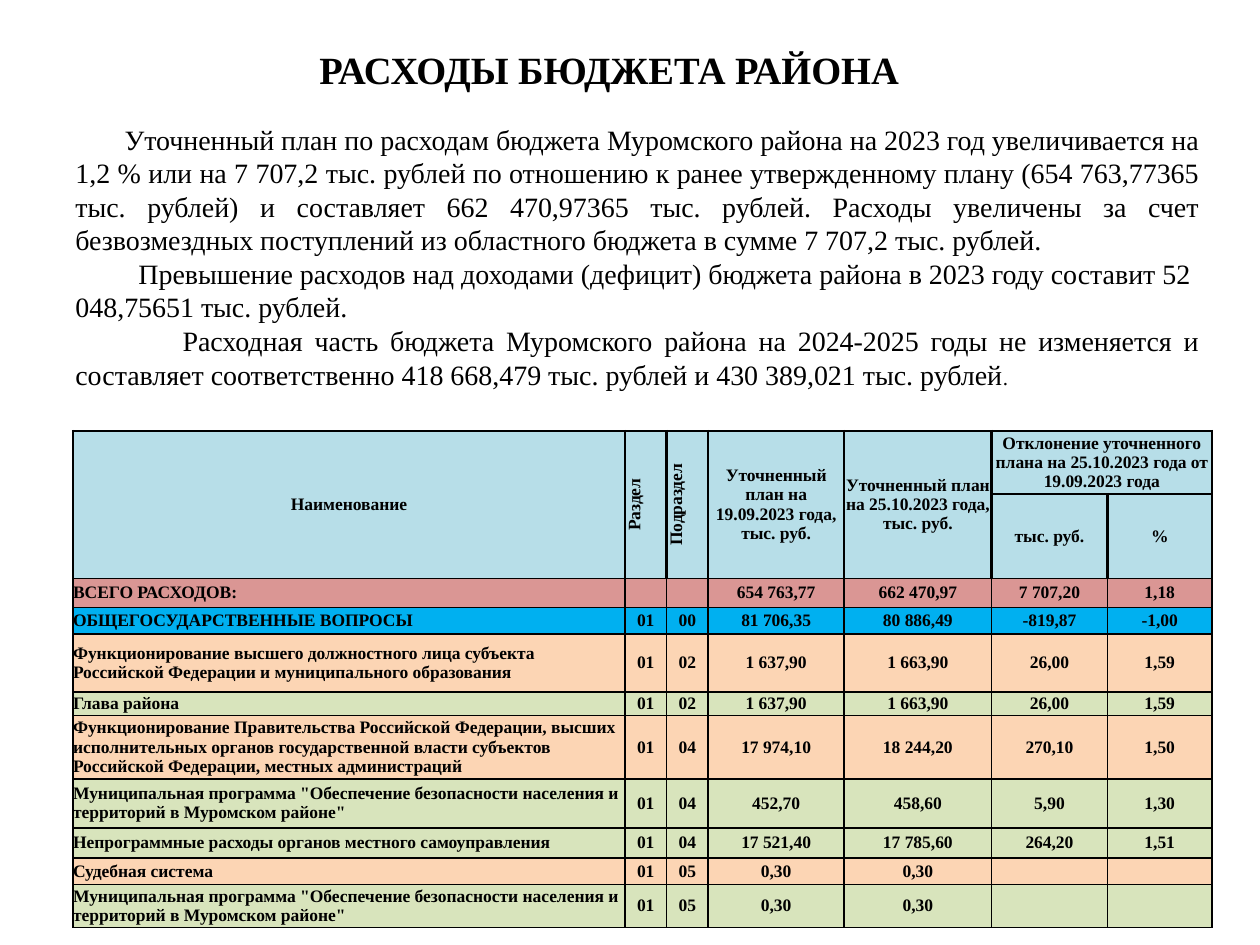
"""Build the slide on the expenditure of the district budget."""
from lxml import etree
from pptx import Presentation
from pptx.dml.color import RGBColor
from pptx.enum import text as t
from pptx.oxml import ns
from pptx.util import Inches, Pt

FONT = "Times New Roman"
BLACK = RGBColor(0, 0, 0)
HEAD = RGBColor(0xB7, 0xDE, 0xE8)
TOTAL = RGBColor(0xDA, 0x96, 0x94)
SECTION = RGBColor(0x00, 0xB0, 0xF0)
SUBSECTION = RGBColor(0xFC, 0xD5, 0xB4)
ITEM = RGBColor(0xD8, 0xE4, 0xBC)
LEFT, CENTER, JUSTIFY = t.PP_ALIGN.LEFT, t.PP_ALIGN.CENTER, t.PP_ALIGN.JUSTIFY

TITLE = "РАСХОДЫ БЮДЖЕТА РАЙОНА"
BODY = [
    (JUSTIFY, 0.39, [("Уточненный план по расходам бюджета Муромского района на 2023 год "
     "увеличивается на 1,2 % или на 7 707,2 тыс. рублей по отношению к ранее "
     "утвержденному плану (654 763,77365 тыс. рублей) и составляет "
     "662 470,97365 тыс. рублей. Расходы увеличены за счет безвозмездных "
     "поступлений из областного бюджета в сумме 7 707,2 тыс. рублей.", 16)]),
    (LEFT, 0.5, [("Превышение расходов над доходами (дефицит) бюджета района в 2023 году "
     "составит 52 048,75651 тыс. рублей.", 16)]),
    (JUSTIFY, 0.85, [("Расходная часть бюджета Муромского района на 2024-2025 годы не "
     "изменяется и составляет соответственно 418 668,479 тыс. рублей и "
     "430 389,021 тыс. рублей", 16), (".", 12)]),
]
PROGRAM = ('Муниципальная программа "Обеспечение безопасности населения '
           'и территорий в Муромском районе"')
ROWS = [
    (HEAD, 0.5, ["Наименование", "Раздел", "Подраздел",
     "Уточненный план на 19.09.2023 года, тыс. руб.",
     "Уточненный план на 25.10.2023 года, тыс. руб.",
     "Отклонение уточненного плана на 25.10.2023 года от 19.09.2023 года", ""]),
    (HEAD, 0.67, ["", "", "", "", "", "тыс. руб.", "%"]),
    (TOTAL, 0.23, ["ВСЕГО РАСХОДОВ:", "", "", "654 763,77", "662 470,97", "7 707,20", "1,18"]),
    (SECTION, 0.21, ["ОБЩЕГОСУДАРСТВЕННЫЕ ВОПРОСЫ", "01", "00",
     "81 706,35", "80 886,49", "-819,87", "-1,00"]),
    (SUBSECTION, 0.46, ["Функционирование высшего должностного лица субъекта Российской "
     "Федерации и муниципального образования", "01", "02",
     "1 637,90", "1 663,90", "26,00", "1,59"]),
    (ITEM, 0.19, ["Глава района", "01", "02", "1 637,90", "1 663,90", "26,00", "1,59"]),
    (SUBSECTION, 0.5, ["Функционирование Правительства Российской Федерации, высших "
     "исполнительных органов государственной власти субъектов Российской Федерации, "
     "местных администраций", "01", "04", "17 974,10", "18 244,20", "270,10", "1,50"]),
    (ITEM, 0.39, [PROGRAM, "01", "04", "452,70", "458,60", "5,90", "1,30"]),
    (ITEM, 0.24, ["Непрограммные расходы органов местного самоуправления", "01", "04",
     "17 521,40", "17 785,60", "264,20", "1,51"]),
    (SUBSECTION, 0.21, ["Судебная система", "01", "05", "0,30", "0,30", "", ""]),
    (ITEM, 0.34, [PROGRAM, "01", "05", "0,30", "0,30", "", ""]),
]
COLS = [4.38, 0.33, 0.33, 1.08, 1.17, 0.92, 0.83]


def add_run(p, content, size, bold):
    r = p.add_run()
    r.text = content
    fmt = {"name": FONT, "size": Pt(size), "bold": bold}
    for key, value in fmt.items():
        setattr(r.font, key, value)
    r.font.color.rgb = BLACK


def add_box(s, at, paragraphs, bold=False):
    tf = s.shapes.add_textbox(*map(Inches, at)).text_frame
    tf.word_wrap = True
    for i, (align, indent, runs) in enumerate(paragraphs):
        p = tf.paragraphs[0] if i == 0 else tf.add_paragraph()
        p.alignment = align
        p._p.get_or_add_pPr().set("indent", str(Inches(indent)))
        for content, size in runs:
            add_run(p, content, size, bold)


def add_borders(cell, widths):
    tc_pr = cell._tc.get_or_add_tcPr()
    for side, width in widths.items():
        ln = etree.SubElement(tc_pr, ns.qn(f"a:ln{side}"), w=str(Pt(width)))
        fill = etree.SubElement(ln, ns.qn("a:solidFill"))
        etree.SubElement(fill, ns.qn("a:srgbClr"), val=str(BLACK))


def fill_cell(cell, content, color, align, widths):
    add_borders(cell, widths)
    cell.fill.solid()
    cell.fill.fore_color.rgb = color
    fmt = {"margin_left": 0, "margin_right": 0, "margin_top": 0, "margin_bottom": 0,
           "vertical_anchor": t.MSO_ANCHOR.MIDDLE}
    for key, value in fmt.items():
        setattr(cell, key, value)
    p = cell.text_frame.paragraphs[0]
    p.alignment = align
    if content:
        add_run(p, content, 10, True)
    else:
        p._p.get_or_add_endParaRPr().set("sz", "1000")


def add_budget_table(s):
    heights = [height for _, height, _ in ROWS]
    table = s.shapes.add_table(len(ROWS), len(COLS), Inches(0.58), Inches(3.42),
                               Inches(sum(COLS)), Inches(sum(heights))).table
    table.first_row = table.horz_banding = False
    for col, width in zip(table.columns, COLS):
        col.width = Inches(width)
    for i, (color, height, values) in enumerate(ROWS):
        table.rows[i].height = Inches(height)
        for j, value in enumerate(values):
            header = color == HEAD
            widths = dict.fromkeys("LRTB", 1.5 if header else 1)
            if header and (i == 1 or j < 5):
                widths["B"] = 1
            align = LEFT if j == 0 and not header else CENTER
            fill_cell(table.cell(i, j), value, color, align, widths)
    for j in range(5):
        table.cell(0, j).merge(table.cell(1, j))
    table.cell(0, 5).merge(table.cell(0, 6))
    for j in (1, 2):
        table.cell(0, j)._tc.get_or_add_tcPr().set("vert", "vert270")


def main():
    prs = Presentation()
    prs.slide_width, prs.slide_height = Inches(10), Inches(7.5)
    s = prs.slides.add_slide(prs.slide_layouts[6])
    add_box(s, (2.17, 0.32, 5.33, 0.47), [(CENTER, 0, [(TITLE, 22)])], bold=True)
    add_box(s, (0.5, 0.92, 9.12, 2.26), BODY)
    add_budget_table(s)
    prs.save("out.pptx")


if __name__ == "__main__":
    main()
